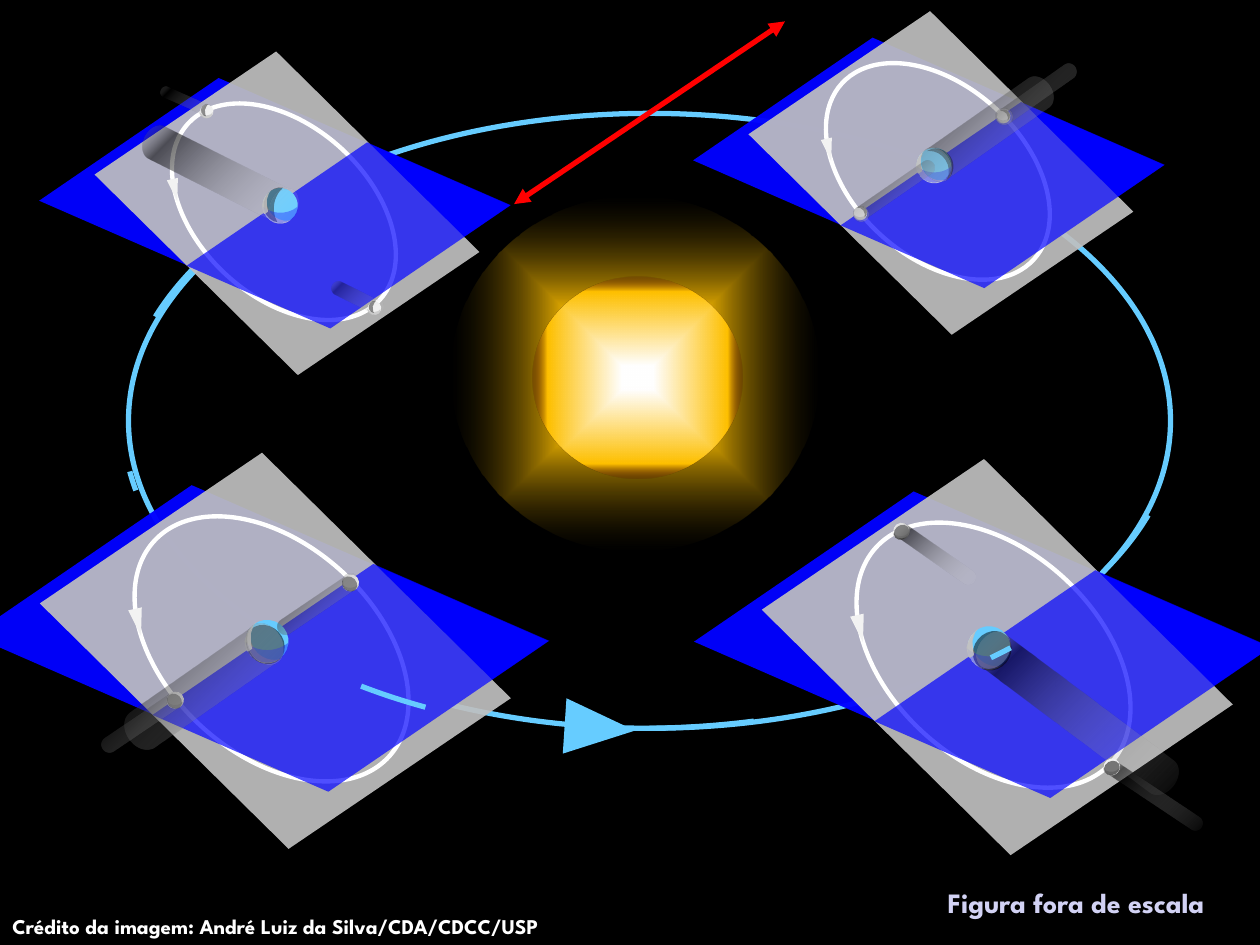
import dataclasses

import lxml.etree
import pptx
import pptx.dml.color
import pptx.enum.shapes
import pptx.enum.text
import pptx.oxml.ns
import pptx.util

KIND = pptx.enum.shapes.MSO_SHAPE
ALIGN = pptx.enum.text.PP_ALIGN
qualify = pptx.oxml.ns.qn


@dataclasses.dataclass(frozen=True)
class Theme:
    """Colours, font and type sizes of the slide."""

    space: str = "000000"
    orbit: str = "66CCFF"
    ecliptic: str = "0000FF"
    lunar_sheet: str = "BFBFBF"
    crescent: str = "D9D9D9"
    moon: str = "F2F2F2"
    moon_rim: str = "C0C0C0"
    white: str = "FFFFFF"
    ray: str = "FF0000"
    caption: str = "D2D2F4"
    glow: tuple = ((7, "FFFFFF", 100), (32, "FFC000", 100), (100, "000000", 23))
    disc: tuple = ((12, "FFFFFF", 100), (85, "FFC000", 100), (100, "4D0808", 17))
    font: str = "League Spartan"
    credit_size: int = 12
    caption_size: int = 16
    orbit_width: float = 3
    path_width: float = 2.5


THEME = Theme()


@dataclasses.dataclass(frozen=True)
class Grid:
    """A grid of square cells, with its corner and cell size in inches."""

    left: float
    top: float
    cell: float

    def point(self, column, row):
        """Return the lengths of a grid point."""
        return (pptx.util.Inches(self.left + column * self.cell),
                pptx.util.Inches(self.top + row * self.cell))

    def box(self, column, row, columns, rows):
        """Return the left, top, width and height of a block of cells."""
        return (*self.point(column, row), pptx.util.Inches(columns * self.cell),
                pptx.util.Inches(rows * self.cell))

    def inner(self, column, row, scale=1):
        """Return a scaled grid that starts at a point of this one."""
        return Grid(self.left + column * self.cell, self.top + row * self.cell, self.cell * scale)


def color(value):
    """Return an RGB colour."""
    return pptx.dml.color.RGBColor.from_string(value)


def add_element(parent, tag, **attributes):
    """Append a DrawingML element."""
    element = lxml.etree.SubElement(parent, qualify(tag))
    for name, value in attributes.items():
        element.set(name, str(value))
    return element


def paint(shape, fill=None, opacity=100, line=None, width=0):
    """Set the fill and outline of a shape and drop its shadow."""
    shape.shadow.inherit = False
    if fill:
        shape.fill.solid()
        shape.fill.fore_color.rgb = color(fill)
        add_element(shape._element.spPr.find(".//" + qualify("a:srgbClr")),
                    "a:alpha", val=opacity * 1000)
    else:
        shape.fill.background()
    if line:
        shape.line.color.rgb = color(line)
        shape.line.width = pptx.util.Pt(width)
    else:
        shape.line.fill.background()
    return shape


def paint_gradient(shape, stops, path, focus):
    """Fill a shape with a path gradient towards a focus rectangle."""
    shape.fill.gradient()
    gradient = shape._element.spPr.find(qualify("a:gradFill"))
    for child in list(gradient):
        gradient.remove(child)
    stop_list = add_element(gradient, "a:gsLst")
    for position, value, opacity in stops:
        stop = add_element(stop_list, "a:gs", pos=position * 1000)
        add_element(add_element(stop, "a:srgbClr", val=value), "a:alpha", val=opacity * 1000)
    target = add_element(gradient, "a:path", path=path)
    add_element(target, "a:fillToRect", **{side: share * 1000 for side, share in zip("ltrb", focus)})


def add_part(shapes, grid, kind, box, rotation=0, adjustments=(), **style):
    """Add a preset shape on the grid."""
    shape = shapes.add_shape(kind, *grid.box(*box))
    shape.rotation = rotation
    for index, value in enumerate(adjustments):
        shape.adjustments[index] = value
    return paint(shape, **style)


def add_orbit_arc(shapes, grid, column, row, start, end):
    """Add a piece of the Earth's orbit between two angles in degrees."""
    add_part(shapes, grid, KIND.ARC, (column, row, 83, 49.2),
             adjustments=(start * 0.6, end * 0.6), line=THEME.orbit, width=THEME.orbit_width)


def add_sun(slide, grid):
    """Add the glow and the disc of the Sun."""
    shapes = slide.shapes.add_group_shape().shapes
    for box, stops in (((0, 0, 29.2, 28.3), THEME.glow), ((6.5, 6.5, 16.6, 16), THEME.disc)):
        shape = add_part(shapes, grid, KIND.OVAL, box)
        paint_gradient(shape, stops, "shape", (50, 50, 50, 50))


def add_night(shapes, grid, kind, box, rotation, adjustments=()):
    """Add the dark side of a body."""
    add_part(shapes, grid, kind, box, rotation, adjustments,
             fill=THEME.space, opacity=51 if kind == KIND.OVAL else 47)


def add_sheets(shapes, grid):
    """Add the ecliptic sheet, the lunar sheet and the Moon's path."""
    add_part(shapes, grid, KIND.PARALLELOGRAM, (0, 0, 42.1, 17.9), 23.6, (0.626,),
             fill=THEME.ecliptic, opacity=97)
    add_part(shapes, grid, KIND.PARALLELOGRAM, (6.3, -0.5, 31.9, 20.9), 44.6, (0.199,),
             fill=THEME.lunar_sheet, opacity=92)
    add_part(shapes, grid, KIND.OVAL, (9.3, 1.5, 25.3, 16.6), 42.6,
             line=THEME.white, width=THEME.path_width)
    add_part(shapes, grid, KIND.PARALLELOGRAM, (15, 3.1, 26.5, 18), 23.6, (0.626,),
             fill=THEME.ecliptic, opacity=69)
    add_part(shapes, grid, KIND.ISOSCELES_TRIANGLE, (10.8, 6.6, 1.1, 2.2), 167.6, fill=THEME.moon)


def add_earth(shapes, grid, night):
    """Add the Earth with its dark side and its grey edge."""
    add_part(shapes, grid, KIND.OVAL, (19.9, 7.5, 3.4, 3.4), 351.5, fill=THEME.orbit)
    add_part(shapes, grid, KIND.MOON, (20.1, 8.1, 1.6, 3.4), 320.6, (0.341,),
             fill=THEME.crescent, opacity=94)
    add_night(shapes, grid, *night)
    add_part(shapes, grid, KIND.MOON, (20.8, 8.4, 1.6, 3.4), 270, (0.629,),
             fill=THEME.ecliptic, opacity=36)
    edge = ((20.7, 7.7), (20.5, 8), (20.3, 8.6), (20.3, 9.3), (20.4, 9.7), (20.4, 9.8),
            (20.1, 10), (20, 10), (19.9, 9.7), (19.8, 9.2), (20, 8.6), (20.3, 8.1))
    points = [grid.point(*point) for point in edge]
    builder = shapes.build_freeform(*points[0])
    builder.add_line_segments(points[1:])
    paint(builder.convert_to_shape(), fill=THEME.lunar_sheet, opacity=85)


def add_moon(shapes, grid, night):
    """Add a Moon with its rim and its dark side."""
    add_part(shapes, grid, KIND.OVAL, (0, 0, 1.3, 1.3), 351.5, fill=THEME.moon)
    add_part(shapes, grid, KIND.MOON, (0.3, 0.4, 0.6, 1.3), 270, (0.497,),
             fill=THEME.moon_rim, opacity=72)
    add_night(shapes, grid, *night)


def add_shadow_cone(shapes, grid, box, rotation, bend, opacity=56):
    """Add the shadow that a body throws away from the Sun."""
    shape = add_part(shapes, grid, KIND.CAN, box, rotation, (bend,))
    stops = ((0, THEME.white, 0), (81, THEME.space, opacity), (100, THEME.lunar_sheet, 0))
    paint_gradient(shape, stops, "circle", (100, 100, 0, 0))


def add_station(slide, page, grid, night, moons, cones, arc, front_moons=()):
    """Add the Earth and Moon at one place of the orbit."""
    shapes = slide.shapes.add_group_shape().shapes
    add_sheets(shapes, grid)
    add_earth(shapes, grid, night)
    for column, row, moon_night in moons:
        add_moon(shapes, grid.inner(column, row), moon_night)
    add_orbit_arc(shapes, page, *arc)
    for cone in cones:
        add_shadow_cone(shapes, grid, *cone)
    for column, row, moon_night in front_moons:
        add_moon(shapes, grid.inner(column, row), moon_night)


def add_label(slide, box, text, size, value, alignment, wrap):
    """Add one line of bold text."""
    frame = slide.shapes.add_textbox(*box).text_frame
    frame.word_wrap = wrap
    frame.auto_size = pptx.enum.text.MSO_AUTO_SIZE.SHAPE_TO_FIT_TEXT
    paragraph = frame.paragraphs[0]
    paragraph.alignment = alignment
    run = paragraph.add_run()
    run.text = text
    run.font.name, run.font.bold = THEME.font, True
    run.font.size = pptx.util.Pt(size)
    run.font.color.rgb = color(value)


def add_ray(slide, grid):
    """Add the red line with an arrowhead at each end."""
    line = slide.shapes.add_connector(pptx.enum.shapes.MSO_CONNECTOR.STRAIGHT,
                                      *grid.point(62.3, 1.7), *grid.point(40.8, 16.2))
    line.line.color.rgb = color(THEME.ray)
    line.line.width = pptx.util.Pt(THEME.orbit_width)
    for end in ("a:headEnd", "a:tailEnd"):
        add_element(line.line._get_or_add_ln(), end, type="triangle")
    add_element(line._element.spPr, "a:effectLst")


def add_stations(slide, page):
    """Add the four places of the Earth on its orbit."""
    near, far, small = (0, 0.1, 1.1, 1.3), (0.1, 0.1, 1.1, 1.3), 0.817
    half = (KIND.OVAL, near, 316.4)
    add_station(slide, page, page.inner(-0.4, 41.7), (KIND.OVAL, (20, 7.8, 2.9, 3.3), 316.4),
                ((13.7, 13.2, half), (27.6, 3.9, half)),
                (((25, 2.5, 1.3, 7.5), 56, 0.977), ((14.9, 5.6, 3.4, 14.4), 55, 0.771),
                 ((11, 11.9, 1.3, 7.5), 56, 0.977)), (9.5, 8.6, 69.82, 88.74))
    half = (KIND.MOON, (0.6, -0.2, 0.6, 1.2), 142.5, (0.463,))
    add_station(slide, page, page.inner(56.5, 5.6, small),
                (KIND.MOON, (21.7, 7.1, 1.6, 3.4), 146.6, (0.358,)),
                ((13.8, 13.2, half), (27.7, 3.8, half)),
                (((30.7, -2.3, 1.6, 9.2), 235.1, 0.977), ((25, -1.7, 3.5, 14.7), 234.8, 0.745),
                 ((17, 7.1, 1.4, 9.2), 235.2, 0.977)), (9.8, 9, 192.25, 202.94))
    half = (KIND.MOON, (0.1, -0.1, 0.6, 1.2), 9.4, (0.629,))
    add_station(slide, page, page.inner(4.6, 8.8, small),
                (KIND.MOON, (20, 7.3, 1.6, 3.4), 9.4, (0.629,)),
                ((30.1, 18.5, half), (13.8, -0.6, half)),
                (((14, -2, 3.5, 16.4), 116.5, 0.745), ((28.4, 15.4, 1.4, 5.5), 116.4, 0.977, 35),
                 ((11.9, -3.6, 1.1, 5.3), 114, 0.866)), (9.7, 9.2, 127.98, 137.49))
    add_orbit_arc(slide.shapes, page, 9.8, 9, 172.51, 174.68)
    add_orbit_arc(slide.shapes, page, 10.1, 8.7, 100.64, 102.81)
    add_station(slide, page, page.inner(56.9, 42.2), (KIND.OVAL, (20.4, 7.8, 2.9, 3.3), 220),
                ((14, -0.7, (KIND.OVAL, far, 48.2)),),
                (((27, 4.9, 3.2, 19), 306.8, 0.745), ((16.7, -2, 1.2, 7.5), 304.8, 0.977),
                 ((34, 16.3, 1.2, 9.2), 303.7, 0.977)), (10.5, 8.1, 11.81, 19.65),
                ((30.7, 18, (KIND.OVAL, far, 240.2)),))


def main():
    """Build and save the slide."""
    presentation = pptx.Presentation()
    presentation.slide_width, presentation.slide_height = pptx.util.Inches(10), pptx.util.Inches(7.5)
    slide = presentation.slides.add_slide(presentation.slide_layouts[6])
    slide.background.fill.solid()
    slide.background.fill.fore_color.rgb = color(THEME.space)
    page = Grid(0, 0, 0.1)
    add_part(slide.shapes, page, KIND.OVAL, (10.2, 9, 82.7, 48.8),
             line=THEME.orbit, width=THEME.orbit_width)
    add_label(slide, page.box(0, 72, 52.8, 3), "Crédito da imagem: André Luiz da Silva/CDA/CDCC/USP",
              THEME.credit_size, THEME.white, ALIGN.LEFT, True)
    add_sun(slide, page.inner(35.8, 15.5))
    add_part(slide.shapes, page, KIND.ISOSCELES_TRIANGLE, (45.4, 55, 4.4, 5.6), 93.8, fill=THEME.orbit)
    add_stations(slide, page)
    add_ray(slide, page)
    add_label(slide, page.box(72.8, 69.8, 25.2, 3.7), "Figura fora de escala",
              THEME.caption_size, THEME.caption, ALIGN.CENTER, False)
    add_orbit_arc(slide.shapes, page, 11, 8.5, 33.45, 36.15)
    presentation.save("out.pptx")


if __name__ == "__main__":
    main()
